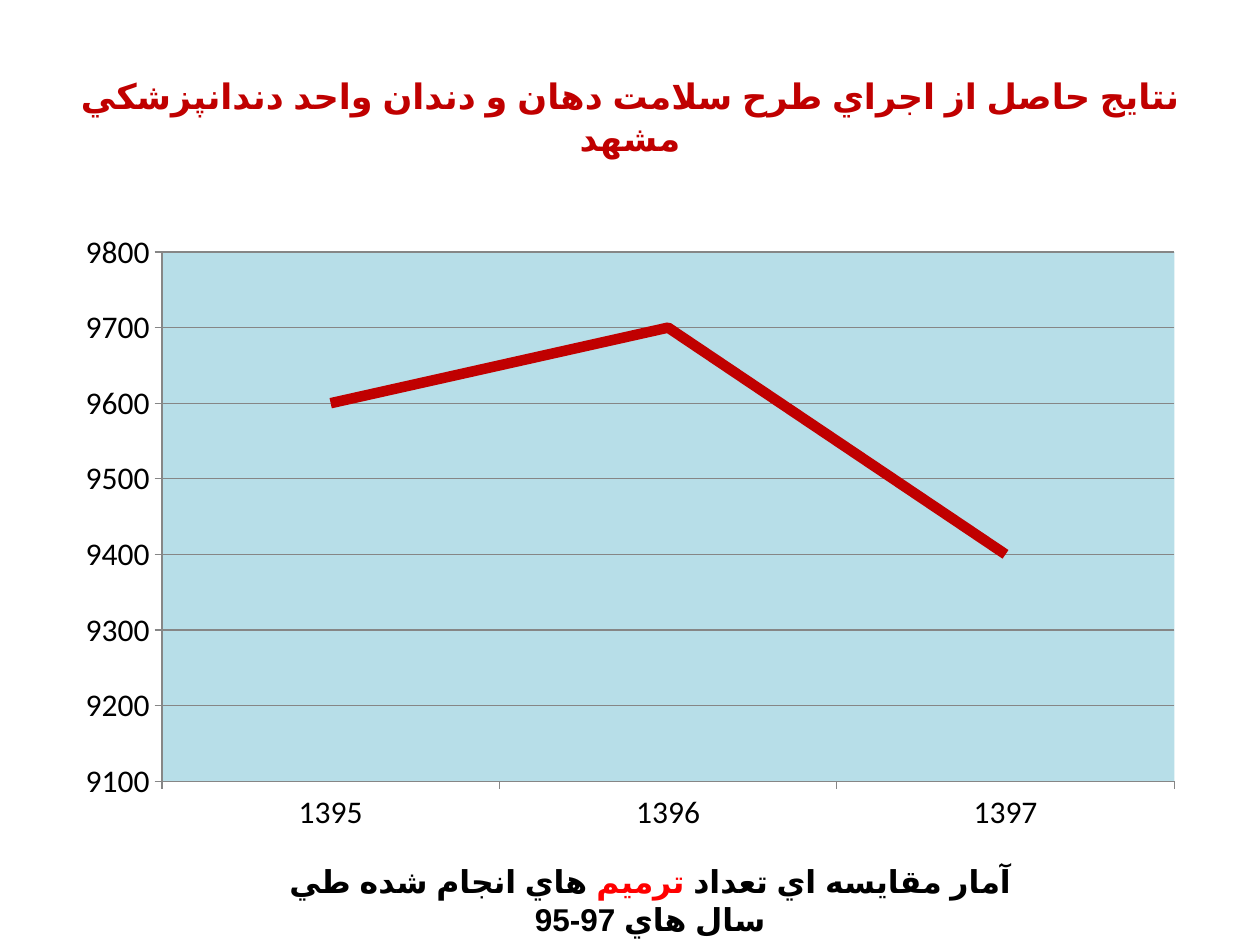
from lxml.etree import SubElement
from pptx import Presentation
from pptx.chart.data import CategoryChartData
from pptx.dml.color import RGBColor
from pptx.enum.chart import XL_CHART_TYPE as ChartType, XL_TICK_MARK as TickMark
from pptx.enum.lang import MSO_LANGUAGE_ID as Language
from pptx.enum.text import MSO_ANCHOR as Anchor, MSO_AUTO_SIZE as AutoSize, PP_ALIGN as Align
from pptx.oxml.ns import qn
from pptx.util import Inches, Pt

FONT = "Calibri"
SCRIPT_FONT = "Arial"  # used for the Persian letters
DARK_RED = RGBColor(0xC0, 0x00, 0x00)
RED = RGBColor(0xFF, 0x00, 0x00)
BLACK = RGBColor(0x00, 0x00, 0x00)
GRAY = RGBColor(0x86, 0x86, 0x86)
PALE_BLUE = RGBColor(0xB7, 0xDE, 0xE8)

# Content
TITLE = [("نتايج حاصل از اجراي طرح سلامت دهان و دندان واحد دندانپزشكي مشهد", DARK_RED)]
CAPTION = [
    ("آمار مقايسه اي تعداد ", BLACK),
    ("ترميم ", RED),
    ("هاي انجام شده طي سال هاي 97-95", BLACK),
]
RESTORATIONS = {"1395": 9600, "1396": 9700, "1397": 9400}


def place(shape, left, top, width, height):
    shape.left, shape.top = Inches(left), Inches(top)
    shape.width, shape.height = Inches(width), Inches(height)


def write_rtl(frame, spans, size):
    """Fill a text frame with one centred, bold right-to-left paragraph."""
    frame.word_wrap = True
    para = frame.paragraphs[0]
    para.alignment = Align.CENTER
    para._p.get_or_add_pPr().set("rtl", "1")
    for text, color in spans:
        span = para.add_run()
        span.text = text
        span.font.name = FONT
        span.font.size = Pt(size)
        span.font.bold = True
        span.font.color.rgb = color
        span.font.language_id = Language.FARSI
        SubElement(span._r.get_or_add_rPr(), qn("a:cs")).set("typeface", SCRIPT_FONT)


deck = Presentation()
deck.slide_width, deck.slide_height = Inches(10), Inches(7.5)
page = deck.slides.add_slide(deck.slide_layouts[5])

# Title
title = page.shapes.title
place(title, 0.5, 0.3, 9, 1.25)
title.text_frame.vertical_anchor = Anchor.MIDDLE
write_rtl(title.text_frame, TITLE, 20)

# Line chart
data = CategoryChartData()
data.categories = list(RESTORATIONS)
data.add_series("Series 1", list(RESTORATIONS.values()))
chart = page.shapes.add_chart(
    ChartType.LINE, Inches(0.5), Inches(1.75), Inches(9), Inches(4.95), data
).chart
chart.has_legend = False
chart.has_title = False
chart.font.name = FONT
chart.font.size = Pt(18)
chart.font.color.rgb = BLACK

plot = chart.plots[0]
plot.vary_by_categories = False
series = plot.series[0]
series.smooth = False
series.format.line.color.rgb = DARK_RED
series.format.line.width = Pt(6)

for axis in (chart.category_axis, chart.value_axis):
    axis.major_tick_mark = TickMark.OUTSIDE
    axis.minor_tick_mark = TickMark.NONE
    axis.format.line.color.rgb = GRAY
values = chart.value_axis
values.minimum_scale, values.maximum_scale, values.major_unit = 9100, 9800, 100
values.has_major_gridlines = True
values.major_gridlines.format.line.color.rgb = GRAY

# Plot area background
plot_area = chart._chartSpace.chart.plotArea
fill = SubElement(SubElement(plot_area, qn("c:spPr")), qn("a:solidFill"))
SubElement(fill, qn("a:srgbClr")).set("val", str(PALE_BLUE))

# Caption
caption = page.shapes.add_textbox(Inches(2.01), Inches(6.79), Inches(6.3), Inches(0.4))
caption.text_frame.auto_size = AutoSize.SHAPE_TO_FIT_TEXT
write_rtl(caption.text_frame, CAPTION, 18)

deck.save("out.pptx")
